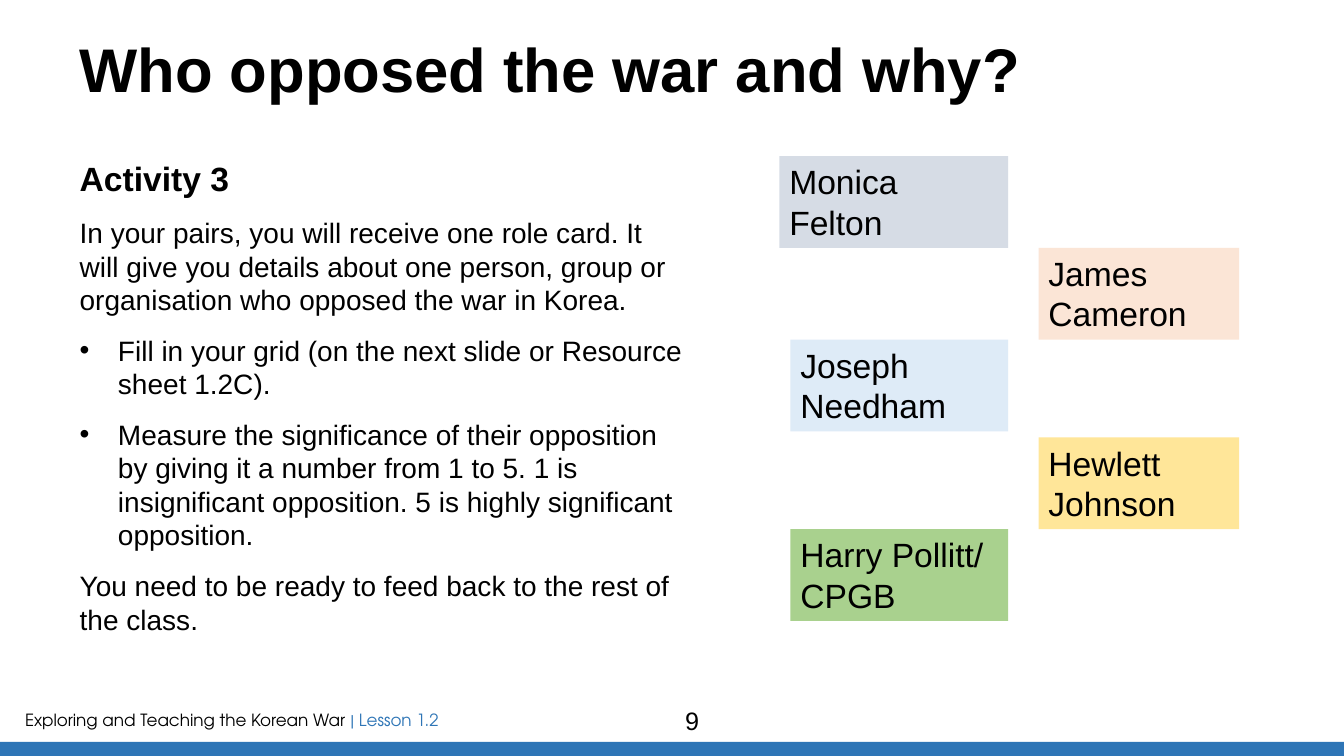
from pptx import Presentation
from pptx.dml.color import RGBColor
from pptx.enum.shapes import MSO_SHAPE
from pptx.enum.text import MSO_ANCHOR, PP_ALIGN
from pptx.util import Inches, Pt
from lxml.etree import SubElement
from pptx.oxml.ns import qn

COLOURS = {
    "black": "000000",
    "blue": "2E75B6",
    "grey": "D6DCE5",
    "peach": "FBE5D6",
    "sky": "DEEBF7",
    "yellow": "FFE699",
    "green": "A9D18E",
}


class LessonPage:
    font_name = "Arial"
    footer_font = "TeX Gyre Adventor"

    def __init__(self, deck):
        self.page = deck.slides.add_slide(deck.slide_layouts[6])

    def colour(self, name):
        return RGBColor.from_string(COLOURS[name])

    def style(self, font, size, bold=False, name=None, colour="black"):
        font.name = name or self.font_name
        font.size = Pt(size)
        font.bold = bold
        font.color.rgb = self.colour(colour)

    def text_box(self, left, top, width, height, inset=True):
        box = self.page.shapes.add_textbox(
            Inches(left), Inches(top), Inches(width), Inches(height))
        frame = box.text_frame
        frame.word_wrap = True
        if not inset:
            frame.margin_left = frame.margin_right = 0
            frame.margin_top = frame.margin_bottom = 0
        return frame

    def line(self, left, top, width, height, text, size, bold=False,
             inset=True, align=PP_ALIGN.LEFT, spacing=None):
        para = self.text_box(left, top, width, height, inset).paragraphs[0]
        para.text = text
        para.alignment = align
        para.line_spacing = spacing
        self.style(para.font, size, bold)

    def bullet(self, para):
        properties = para._p.get_or_add_pPr()
        properties.set("marL", str(Inches(0.38)))
        properties.set("indent", str(-Inches(0.38)))
        SubElement(properties, qn("a:buFont")).set("typeface", "Arial")
        SubElement(properties, qn("a:buChar")).set("char", "•")

    def body(self, left, top, width, height, items):
        frame = self.text_box(left, top, width, height, inset=False)
        for index, (text, size, bold, bulleted) in enumerate(items):
            para = frame.add_paragraph() if index else frame.paragraphs[0]
            para.text = text
            if index:
                para.space_before = Pt(6)
            para.space_after = Pt(6)
            if bulleted:
                self.bullet(para)
            self.style(para.font, size, bold)

    def rectangle(self, left, top, width, height, fill):
        shape = self.page.shapes.add_shape(
            MSO_SHAPE.RECTANGLE,
            Inches(left), Inches(top), Inches(width), Inches(height))
        shape.shadow.inherit = False
        shape.fill.solid()
        shape.fill.fore_color.rgb = self.colour(fill)
        shape.line.fill.background()
        return shape

    def name_card(self, left, top, width, fill, text):
        frame = self.rectangle(left, top, width, 0.91, fill).text_frame
        frame.word_wrap = True
        frame.vertical_anchor = MSO_ANCHOR.TOP
        frame.text = text
        for para in frame.paragraphs:
            para.alignment = PP_ALIGN.LEFT
            self.style(para.font, 24)

    def footer(self, left, top, width, height, spans):
        para = self.text_box(left, top, width, height).paragraphs[0]
        for text, colour in spans:
            span = para.add_run()
            span.text = text
            self.style(span.font, 12, name=self.footer_font, colour=colour)


def main():
    deck = Presentation()
    deck.slide_width, deck.slide_height = Inches(13.33), Inches(7.5)
    lesson = LessonPage(deck)

    lesson.footer(0.15, 6.99, 4.51, 0.3, [
        ("Exploring and Teaching the Korean War ", "black"),
        ("| Lesson 1.2", "blue"),
    ])
    lesson.rectangle(0, 7.36, 13.33, 0.15, "blue")
    lesson.line(0.79, 0.39, 11.5, 0.79, "Who opposed the war and why?", 44,
                bold=True, inset=False, spacing=0.9)
    lesson.body(0.79, 1.57, 5.99, 4.78, [
        ("Activity 3", 24, True, False),
        ("In your pairs, you will receive one role card. It will give you "
         "details about one person, group or organisation who opposed the "
         "war in Korea.", 20, False, False),
        ("Fill in your grid (on the next slide or Resource sheet 1.2C).",
         20, False, True),
        ("Measure the significance of their opposition by giving it a number "
         "from 1 to 5. 1 is insignificant opposition. 5 is highly "
         "significant opposition.", 20, False, True),
        ("You need to be ready to feed back to the rest of the class.",
         20, False, False),
    ])
    for card in [
        (7.73, 1.55, 2.27, "grey", "Monica Felton"),
        (10.3, 2.46, 1.99, "peach", "James Cameron"),
        (7.84, 3.37, 2.16, "sky", "Joseph Needham"),
        (10.3, 4.34, 1.99, "yellow", "Hewlett Johnson"),
        (7.84, 5.25, 2.16, "green", "Harry Pollitt/\nCPGB"),
    ]:
        lesson.name_card(*card)
    lesson.line(4.33, 6.95, 5.07, 0.4, "9", 18, align=PP_ALIGN.CENTER)

    deck.save("out.pptx")


if __name__ == "__main__":
    main()
